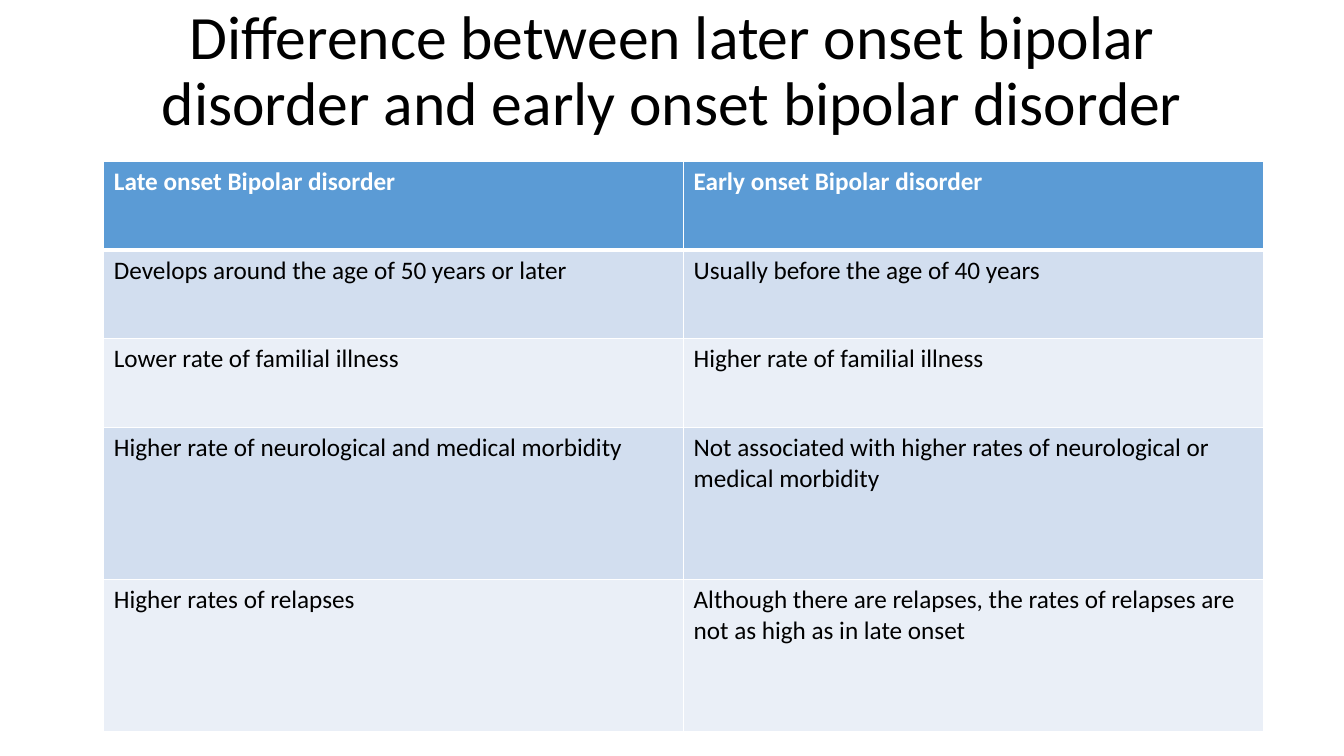
from dataclasses import dataclass

from lxml.etree import SubElement
from pptx import Presentation
from pptx.dml.color import RGBColor
from pptx.enum.text import MSO_ANCHOR, PP_ALIGN
from pptx.oxml.ns import qn
from pptx.util import Inches, Pt


@dataclass(frozen=True)
class Theme:
    """Hold the font, type sizes, colours and line widths."""
    font: str = "Calibri"
    title: int = 44
    body: int = 18
    black: str = "000000"
    white: str = "FFFFFF"
    head: str = "5B9BD5"
    bands: tuple = ("D2DEEF", "EAEFF7")
    thin: int = 1
    thick: int = 3


THEME = Theme()
TITLE = "Difference between later onset bipolar disorder and early onset bipolar disorder"
ROWS = [
    ("Late onset Bipolar disorder", "Early onset Bipolar disorder"),
    ("Develops around the age of 50 years or later", "Usually before the age of 40 years"),
    ("Lower rate of familial illness", "Higher rate of familial illness"),
    ("Higher rate of neurological and medical morbidity",
     "Not associated with higher rates of neurological or medical morbidity"),
    ("Higher rates of relapses",
     "Although there are relapses, the rates of relapses are not as high as in late onset"),
]
HEIGHTS = (0.88, 0.88, 0.88, 1.51, 1.51)
WIDTH = 5.75


def add_run(para, text, size, color, bold=False):
    """Add one styled run to a paragraph."""
    run = para.add_run()
    run.text = text
    font = run.font
    font.name, font.size, font.bold = THEME.font, Pt(size), bold
    font.color.rgb = RGBColor.from_string(color)


def add_title(slide):
    """Place and fill the title."""
    title = slide.shapes.title
    title.left, title.top = Inches(0.92), Inches(0)
    title.width, title.height = Inches(11.5), Inches(1.44)
    frame = title.text_frame
    frame.word_wrap = True
    frame.vertical_anchor = MSO_ANCHOR.MIDDLE
    para = frame.paragraphs[0]
    para.alignment = PP_ALIGN.CENTER
    para.line_spacing = 0.9
    add_run(para, TITLE, THEME.title, THEME.black)


def add_edge(cell, side, width):
    """Draw one white cell border."""
    props = cell._tc.get_or_add_tcPr()
    line = SubElement(props, qn(f"a:ln{side}"), w=str(Pt(width)))
    fill = SubElement(line, qn("a:solidFill"))
    SubElement(fill, qn("a:srgbClr"), val=THEME.white)


def fill_cell(cell, text, row):
    """Style a cell by its row and write its text."""
    head = row == 0
    wide = {"T": row == 1, "B": head}
    for side in "LRTB":
        add_edge(cell, side, THEME.thick if wide.get(side) else THEME.thin)
    cell.fill.solid()
    shade = THEME.head if head else THEME.bands[(row - 1) % 2]
    cell.fill.fore_color.rgb = RGBColor.from_string(shade)
    color = THEME.white if head else THEME.black
    add_run(cell.text_frame.paragraphs[0], text, THEME.body, color, head)


def add_grid(slide):
    """Build the table that compares late and early onset."""
    count = len(ROWS[0])
    grid = slide.shapes.add_table(
        len(ROWS), count, Inches(1.03), Inches(1.6),
        Inches(WIDTH * count), Inches(sum(HEIGHTS))).table
    for col in grid.columns:
        col.width = Inches(WIDTH)
    for row, (texts, height) in enumerate(zip(ROWS, HEIGHTS)):
        grid.rows[row].height = Inches(height)
        for col, text in enumerate(texts):
            fill_cell(grid.cell(row, col), text, row)


def main():
    """Build and save the slide."""
    deck = Presentation()
    deck.slide_width, deck.slide_height = Inches(13.33), Inches(7.5)
    slide = deck.slides.add_slide(deck.slide_layouts[5])
    add_title(slide)
    add_grid(slide)
    deck.save("out.pptx")


if __name__ == "__main__":
    main()
